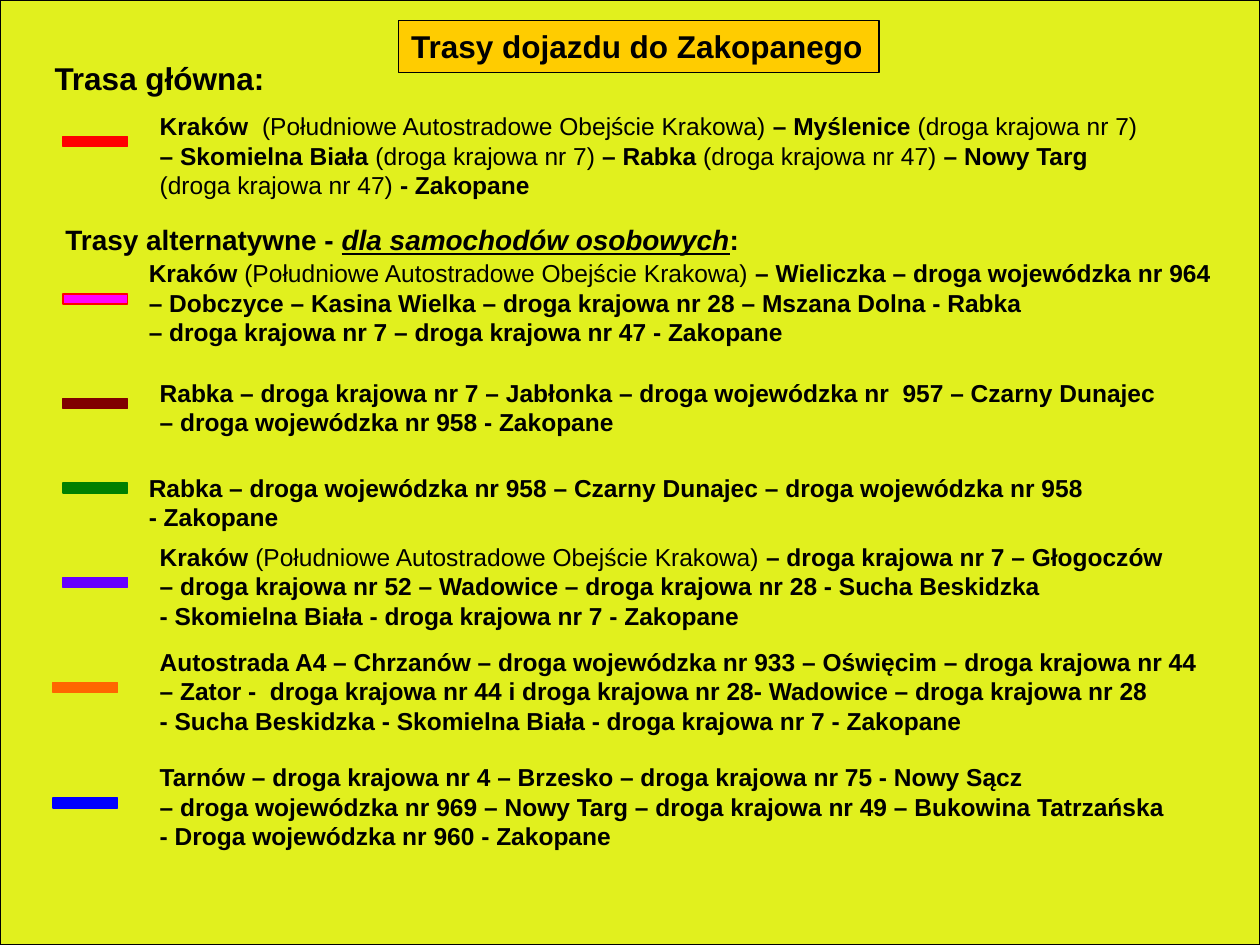
import pptx
import pptx.dml.color
import pptx.enum.shapes
import pptx.enum.text
import pptx.util
from pptx.util import Cm

BACKGROUND = "E1F01E"
BLACK = "000000"
SWATCH_SIZE = (1.3, 0.2)
ROUTE_WIDTH = 19.53
ROUTE_HEIGHT = 0.76
BYPASS = "(Południowe Autostradowe Obejście Krakowa)"

MAIN_ROUTE = [
    ["Kraków  ", BYPASS, " – Myślenice ", "(droga krajowa nr 7)"],
    ["– Skomielna Biała ", "(droga krajowa nr 7)", " – Rabka ", "(droga krajowa nr 47)", " – Nowy Targ"],
    ["(droga krajowa nr 47) ", "- Zakopane"],
]

ALTERNATIVE_ROUTES = [
    ((2.75, 5.72), (1.27, 5.93), "FF00FF", "FF0000", [
        ["Kraków ", BYPASS, " – Wieliczka – droga wojewódzka nr 964"],
        ["– Dobczyce – Kasina Wielka – droga krajowa nr 28 – Mszana Dolna - Rabka"],
        ["– droga krajowa nr 7 – droga krajowa nr 47 - Zakopane"],
    ]),
    ((2.97, 7.83), (1.27, 8.04), "800000", "800000", [
        ["Rabka – droga krajowa nr 7 – Jabłonka – droga wojewódzka nr  957 – Czarny Dunajec"],
        ["– droga wojewódzka nr 958 - Zakopane"],
    ]),
    ((2.75, 9.74), (1.27, 9.74), "008000", "008000", [
        ["Rabka – droga wojewódzka nr 958 – Czarny Dunajec – droga wojewódzka nr 958"],
        ["- Zakopane"],
    ]),
    ((2.97, 11.43), (1.27, 11.64), "6600FF", "6600FF", [
        ["Kraków ", BYPASS, " – droga krajowa nr 7 – Głogoczów"],
        ["– droga krajowa nr 52 – Wadowice – droga krajowa nr 28 - Sucha Beskidzka"],
        ["- Skomielna Biała - droga krajowa nr 7 - Zakopane"],
    ]),
    ((2.97, 13.55), (1.07, 13.76), "FF6600", "FF6600", [
        ["Autostrada A4 – Chrzanów – droga wojewódzka nr 933 – Oświęcim – droga krajowa nr 44"],
        ["– Zator -  droga krajowa nr 44 i droga krajowa nr 28- Wadowice – droga krajowa nr 28"],
        ["- Sucha Beskidzka - Skomielna Biała - droga krajowa nr 7 - Zakopane"],
    ]),
    ((2.97, 15.88), (1.07, 16.09), "0000FF", "0000FF", [
        ["Tarnów – droga krajowa nr 4 – Brzesko – droga krajowa nr 75 - Nowy Sącz"],
        ["– droga wojewódzka nr 969 – Nowy Targ – droga krajowa nr 49 – Bukowina Tatrzańska"],
        ["- Droga wojewódzka nr 960 - Zakopane"],
    ]),
]


def color(value):
    """Turn a hex string into a colour."""
    return pptx.dml.color.RGBColor.from_string(value)


def add_box(slide, left, top, width, height, fill, line=None):
    """Draw a flat rectangle with lengths in centimetres."""
    box = slide.shapes.add_shape(
        pptx.enum.shapes.MSO_SHAPE.RECTANGLE, Cm(left), Cm(top), Cm(width), Cm(height))
    box.shadow.inherit = False
    box.fill.solid()
    box.fill.fore_color.rgb = color(fill)
    if line:
        box.line.color.rgb = color(line)
        box.line.width = pptx.util.Pt(0.75)
    else:
        box.line.fill.background()
    return box


def add_run(paragraph, text, size=14, bold=True, italic=False, underline=False):
    """Append a formatted run to a paragraph."""
    run = paragraph.add_run()
    run.text = text
    run.font.name = "Arial"
    run.font.size = pptx.util.Pt(size)
    run.font.bold = bold
    run.font.italic = italic
    run.font.underline = underline
    run.font.color.rgb = color(BLACK)


def start_text(box, anchor=pptx.enum.text.MSO_ANCHOR.MIDDLE, grow=False):
    """Set up an unwrapped frame and return its first paragraph."""
    frame = box.text_frame
    frame.word_wrap = False
    frame.vertical_anchor = anchor
    if grow:
        frame.auto_size = pptx.enum.text.MSO_AUTO_SIZE.SHAPE_TO_FIT_TEXT
    frame.paragraphs[0].alignment = pptx.enum.text.PP_ALIGN.LEFT
    return frame.paragraphs[0]


def add_route(slide, position, swatch, fill, line, stops, height=ROUTE_HEIGHT):
    """Draw a colour swatch and the lines of its route, with road notes in regular weight."""
    add_box(slide, *swatch, *SWATCH_SIZE, fill, line)
    box = add_box(slide, *position, ROUTE_WIDTH, height, BACKGROUND)
    paragraph = start_text(box)
    for index, segments in enumerate(stops):
        if index:
            paragraph = box.text_frame.add_paragraph()
            paragraph.alignment = pptx.enum.text.PP_ALIGN.LEFT
        for segment in segments:
            add_run(paragraph, segment, bold=not segment.startswith("("))


def add_alternative_heading(slide, left, top):
    """Place the heading above the alternative routes."""
    box = add_box(slide, left, top, ROUTE_WIDTH, ROUTE_HEIGHT, BACKGROUND)
    paragraph = start_text(box)
    add_run(paragraph, "Trasy alternatywne - ", size=16)
    add_run(paragraph, "dla samochodów osobowych", size=16, italic=True, underline=True)
    add_run(paragraph, ":", size=16)


def add_main_heading(slide, left, top, width, height):
    """Place the heading above the main route."""
    box = slide.shapes.add_textbox(Cm(left), Cm(top), Cm(width), Cm(height))
    add_run(start_text(box, pptx.enum.text.MSO_ANCHOR.TOP, grow=True), "Trasa główna:", size=18)


def add_title(slide, left, top, width, height):
    """Place the framed slide title."""
    box = add_box(slide, left, top, width, height, "FFCC00", BLACK)
    paragraph = start_text(box, pptx.enum.text.MSO_ANCHOR.TOP, grow=True)
    add_run(paragraph, "Trasy dojazdu do Zakopanego", size=18)


def main():
    """Build and save the slide."""
    presentation = pptx.Presentation()
    presentation.slide_width = Cm(25.4)
    presentation.slide_height = Cm(19.05)
    slide = presentation.slides.add_slide(presentation.slide_layouts[6])
    add_box(slide, 0, 0, 25.4, 19.05, BACKGROUND, BLACK)
    add_route(slide, (2.97, 2.33), (1.27, 2.75), "FF0000", "FF0000", MAIN_ROUTE, height=1.6)
    add_alternative_heading(slide, 1.07, 4.45)
    for route in ALTERNATIVE_ROUTES:
        add_route(slide, *route)
    add_main_heading(slide, 0.85, 1.06, 4.78, 1.02)
    add_title(slide, 8.04, 0.42, 9.68, 1.04)
    presentation.save("out.pptx")


if __name__ == "__main__":
    main()
